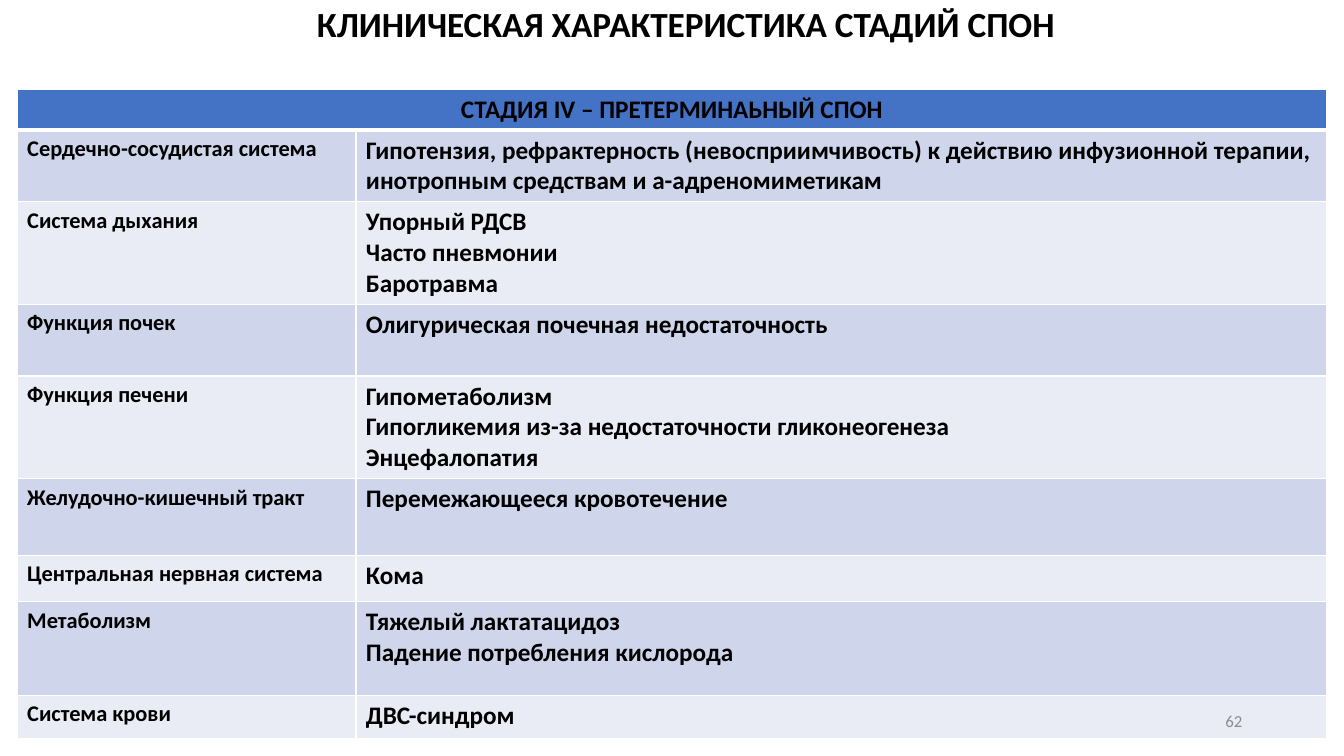
from lxml import etree
from pptx import Presentation
from pptx import util as u
from pptx.dml.color import RGBColor
from pptx.enum import text
from pptx.oxml.ns import qn

FONT = "Calibri"
HEADER_FILL = "4472C4"
BAND_FILLS = ("CFD5EA", "E9EBF5")
STAGE = "СТАДИЯ IV – ПРЕТЕРМИНАЬНЫЙ СПОН"
HEADER_HEIGHT = 0.4
COLUMN_WIDTHS = (3.36, 9.63)

# System, its signs, row height in inches
SYSTEMS = [
    ("Сердечно-сосудистая система",
     ["Гипотензия, рефрактерность (невосприимчивость) к действию инфузионной "
      "терапии, инотропным средствам и а-адреномиметикам"], 0.71),
    ("Система дыхания", ["Упорный РДСВ", "Часто пневмонии", "Баротравма"], 1.02),
    ("Функция почек", ["Олигурическая почечная недостаточность"], 0.71),
    ("Функция печени",
     ["Гипометаболизм", "Гипогликемия из-за недостаточности гликонеогенеза",
      "Энцефалопатия"], 1.02),
    ("Желудочно-кишечный тракт", ["Перемежающееся кровотечение"], 0.76),
    ("Центральная нервная система", ["Кома"], 0.46),
    ("Метаболизм", ["Тяжелый лактатацидоз", "Падение потребления кислорода"], 0.93),
    ("Система крови", ["ДВС-синдром"], 0.43),
]


def color(value):
    return RGBColor.from_string(value)


def write(frame, lines, size, bold=True, fill="000000",
          align=text.PP_ALIGN.LEFT, spacing=None):
    for index, line in enumerate(lines):
        para = frame.paragraphs[0] if index == 0 else frame.add_paragraph()
        para.alignment = align
        if spacing:
            para.line_spacing = spacing
        span = para.add_run()
        span.text = line
        span.font.name = FONT
        span.font.size = u.Pt(size)
        span.font.bold = bold
        span.font.color.rgb = color(fill)


def add_label(page, box, label, size, **style):
    shape = page.shapes.add_textbox(*(u.Inches(side) for side in box))
    frame = shape.text_frame
    frame.word_wrap = True
    frame.vertical_anchor = text.MSO_ANCHOR.MIDDLE
    write(frame, [label], size, **style)


def style_cell(cell, fill, top=1, bottom=1):
    properties = cell._tc.get_or_add_tcPr()
    for side, width in (("L", 1), ("R", 1), ("T", top), ("B", bottom)):
        line = etree.SubElement(properties, qn(f"a:ln{side}"), w=str(u.Pt(width)))
        solid = etree.SubElement(line, qn("a:solidFill"))
        etree.SubElement(solid, qn("a:srgbClr"), val="FFFFFF")
    cell.fill.solid()
    cell.fill.fore_color.rgb = color(fill)


def add_stage_table(page, left, top):
    heights = [HEADER_HEIGHT] + [height for _, _, height in SYSTEMS]
    table = page.shapes.add_table(
        len(heights), len(COLUMN_WIDTHS), u.Inches(left), u.Inches(top),
        u.Inches(sum(COLUMN_WIDTHS)), u.Inches(sum(heights))).table
    for column, width in zip(table.columns, COLUMN_WIDTHS):
        column.width = u.Inches(width)
    for row, height in zip(table.rows, heights):
        row.height = u.Inches(height)

    # Header across both columns
    header = table.cell(0, 0)
    header.merge(table.cell(0, 1))
    for cell in table.rows[0].cells:
        style_cell(cell, HEADER_FILL, bottom=3)
    write(header.text_frame, [STAGE], 18, align=text.PP_ALIGN.CENTER)

    # Banded rows
    for index, (system, signs, _) in enumerate(SYSTEMS):
        name_cell, signs_cell = table.rows[index + 1].cells
        for cell in (name_cell, signs_cell):
            style_cell(cell, BAND_FILLS[index % 2], top=3 if index == 0 else 1)
        write(name_cell.text_frame, [system], 16)
        write(signs_cell.text_frame, signs, 18)


def main():
    deck = Presentation()
    deck.slide_width = u.Inches(13.33)
    deck.slide_height = u.Inches(7.5)
    page = deck.slides.add_slide(deck.slide_layouts[6])

    # Title, table, page number
    add_label(page, (0.47, 0, 12.67, 0.51), "КЛИНИЧЕСКАЯ ХАРАКТЕРИСТИКА СТАДИЙ СПОН",
              25.2, align=text.PP_ALIGN.CENTER, spacing=0.9)
    add_stage_table(page, 0.17, 0.89)
    add_label(page, (9.42, 6.95, 3, 0.4), "62", 12, bold=False, fill="8C8C8C",
              align=text.PP_ALIGN.RIGHT)
    deck.save("out.pptx")


if __name__ == "__main__":
    main()
